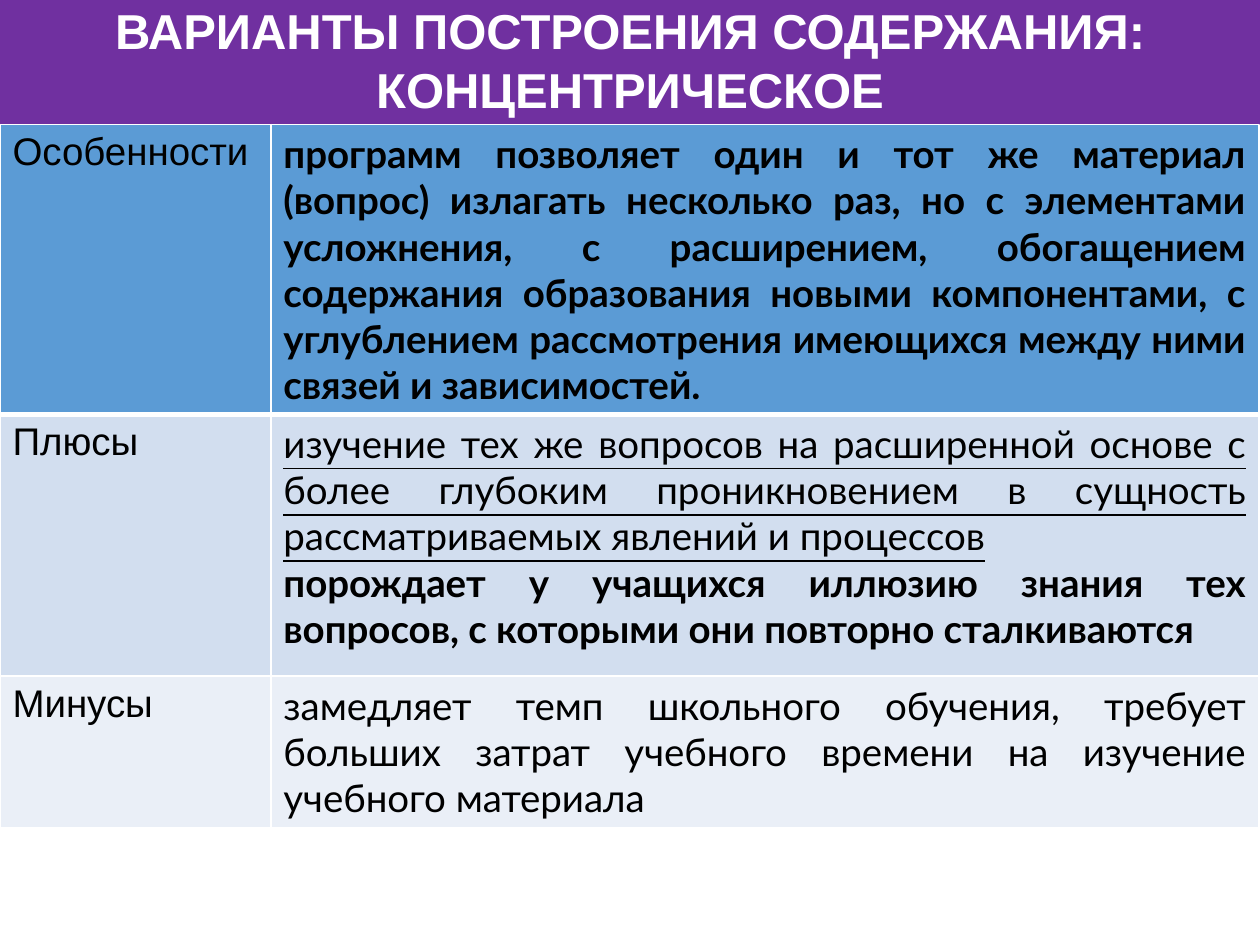
import pptx
import pptx.dml.color
import pptx.enum.text
import pptx.oxml.ns
import pptx.util
from lxml import etree

Cm = pptx.util.Cm
ALIGN = pptx.enum.text.PP_ALIGN
COLORS = {
    "title": "7030A0",
    "white": "FFFFFF",
    "text": "000000",
    "features": "5B9BD5",
    "pluses": "D2DEEF",
    "minuses": "EAEFF7",
}


def rgb(name):
    return pptx.dml.color.RGBColor.from_string(COLORS[name])


def write(paragraph, text, font="Lato", size=22, color="text", bold=False,
          underline=False, align=ALIGN.JUSTIFY):
    paragraph.alignment = align
    run = paragraph.add_run()
    run.text = text
    run.font.name = font
    run.font.size = pptx.util.Pt(size)
    run.font.bold = bold
    run.font.underline = underline
    run.font.color.rgb = rgb(color)


deck = pptx.Presentation()
deck.slide_width, deck.slide_height = Cm(25.4), Cm(19.05)
slide = deck.slides.add_slide(deck.slide_layouts[5])

# Title band
heading = slide.shapes.title
heading.left, heading.top = Cm(0), Cm(0)
heading.width, heading.height = Cm(25.4), Cm(2.51)
heading.fill.solid()
heading.fill.fore_color.rgb = rgb("title")
heading_frame = heading.text_frame
heading_frame.word_wrap = True
heading_frame.auto_size = pptx.enum.text.MSO_AUTO_SIZE.NONE
heading_frame.vertical_anchor = pptx.enum.text.MSO_ANCHOR.BOTTOM
heading_lines = ["ВАРИАНТЫ ПОСТРОЕНИЯ СОДЕРЖАНИЯ:", "КОНЦЕНТРИЧЕСКОЕ"]
for index, line in enumerate(heading_lines):
    paragraph = heading_frame.add_paragraph() if index else heading_frame.paragraphs[0]
    write(paragraph, line, font="Arial", size=28, color="white", bold=True,
          align=ALIGN.CENTER)

# Table content: label, fill, row height, paragraphs with their format
aspects = [
    ("Особенности", "features", 5.28, [
        ("программ позволяет один и тот же материал (вопрос) излагать "
         "несколько раз, но с элементами усложнения, с расширением, "
         "обогащением содержания образования новыми компонентами, "
         "с углублением рассмотрения имеющихся между ними связей и "
         "зависимостей.", {"bold": True}),
    ]),
    ("Плюсы", "pluses", 5.28, [
        ("изучение тех же вопросов на расширенной основе с более глубоким "
         "проникновением в сущность рассматриваемых явлений и процессов",
         {"underline": True}),
        ("порождает у учащихся иллюзию знания тех вопросов, с которыми они "
         "повторно сталкиваются", {"bold": True}),
    ]),
    ("Минусы", "minuses", 2.36, [
        ("замедляет темп школьного обучения, требует больших затрат учебного "
         "времени на изучение учебного материала", {}),
    ]),
]

# Table grid
comparison = slide.shapes.add_table(
    len(aspects), 2, Cm(0), Cm(2.51), Cm(25.37), Cm(12.92)).table
comparison.first_row = False
comparison.horz_banding = False
for column, width in zip(comparison.columns, (5.46, 19.91)):
    column.width = Cm(width)

# Table rows
for row, (label, fill, height, details) in enumerate(aspects):
    comparison.rows[row].height = Cm(height)
    entries = [[(label, {"font": "Arial"})], details]
    for column, paragraphs in enumerate(entries):
        cell = comparison.cell(row, column)
        for index, (text, style) in enumerate(paragraphs):
            frame = cell.text_frame
            paragraph = frame.add_paragraph() if index else frame.paragraphs[0]
            write(paragraph, text, **style)

        # White borders, thicker under the first row
        properties = cell._tc.get_or_add_tcPr()
        for side in "LRTB":
            points = 3 if row == 0 and side == "B" else 1
            border = etree.SubElement(
                properties, pptx.oxml.ns.qn("a:ln" + side),
                w=str(pptx.util.Pt(points)))
            paint = etree.SubElement(border, pptx.oxml.ns.qn("a:solidFill"))
            etree.SubElement(paint, pptx.oxml.ns.qn("a:srgbClr"),
                             val=COLORS["white"])
        cell.fill.solid()
        cell.fill.fore_color.rgb = rgb(fill)

deck.save("out.pptx")
